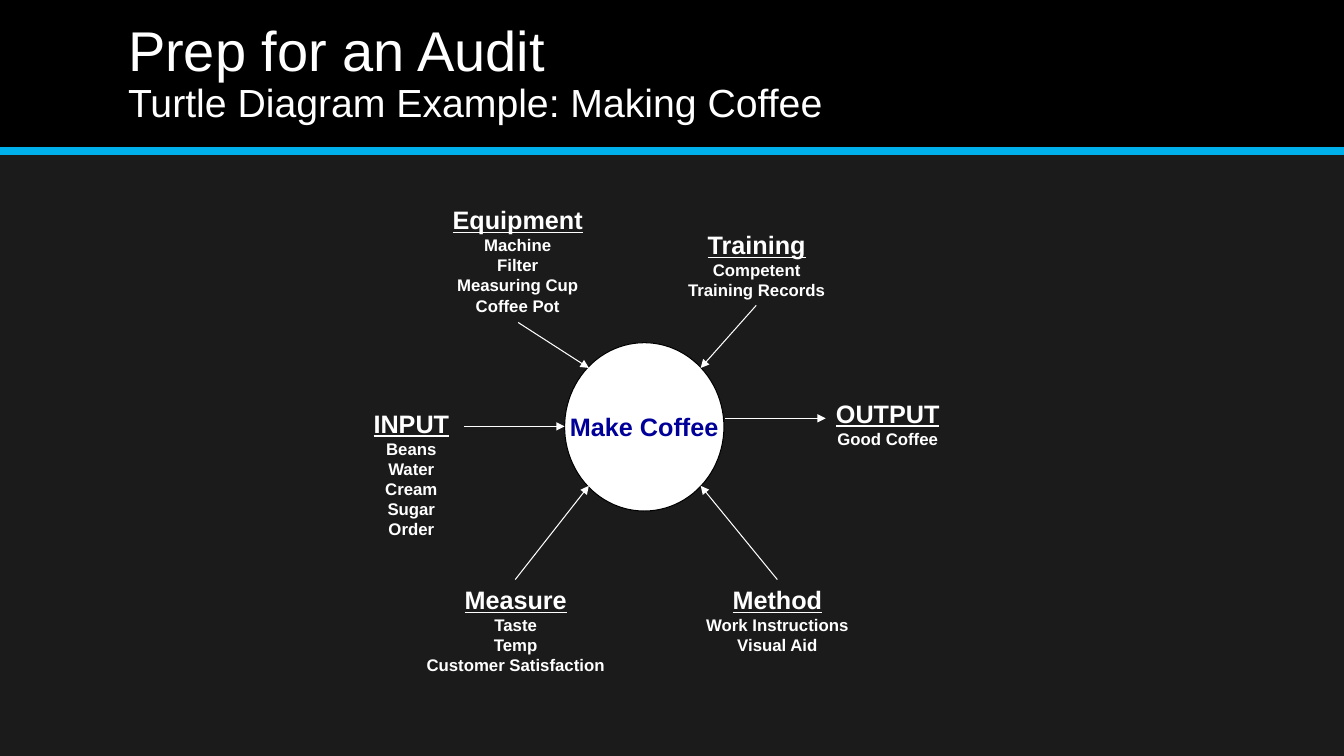
from dataclasses import dataclass

from lxml import etree
from pptx import Presentation
from pptx.dml.color import RGBColor
from pptx.enum.shapes import MSO_CONNECTOR, MSO_SHAPE
from pptx.enum.text import MSO_ANCHOR, MSO_AUTO_SIZE, PP_ALIGN
from pptx.oxml.ns import qn
from pptx.util import Inches, Pt

STRAIGHT = MSO_CONNECTOR.STRAIGHT
RECTANGLE, OVAL = MSO_SHAPE.RECTANGLE, MSO_SHAPE.OVAL
MIDDLE = MSO_ANCHOR.MIDDLE
LEFT, CENTER = PP_ALIGN.LEFT, PP_ALIGN.CENTER
FIT_SHAPE, NO_FIT = MSO_AUTO_SIZE.SHAPE_TO_FIT_TEXT, MSO_AUTO_SIZE.NONE
TITLE_ONLY_LAYOUT = 5


@dataclass(frozen=True)
class Theme:
    font: str = "Arial"
    background: RGBColor = RGBColor(0x1B, 0x1B, 0x1B)
    black: RGBColor = RGBColor(0, 0, 0)
    white: RGBColor = RGBColor(255, 255, 255)
    accent: RGBColor = RGBColor(0x00, 0xB0, 0xEA)
    navy: RGBColor = RGBColor(0, 0, 0x99)
    title: Pt = Pt(40)
    subtitle: Pt = Pt(28)
    heading: Pt = Pt(18)
    item: Pt = Pt(12)
    thin: Pt = Pt(0.75)
    thick: Pt = Pt(6)


THEME = Theme()
WIDTH, HEIGHT = 13.33, 7.5

# Heading, items, box (left, top, width, height)
NOTES = [
    ("INPUT", ["Beans", "Water", "Cream", "Sugar", "Order"], (3.6, 4, 0.96, 1.62)),
    ("OUTPUT", ["Good Coffee"], (8.19, 3.9, 1.23, 0.6)),
    ("Measure", ["Taste", "Temp", "Customer Satisfaction"], (4.13, 5.75, 1.97, 1)),
    ("Method", ["Work Instructions", "Visual Aid"], (6.9, 5.75, 1.62, 1)),
    ("Equipment", ["Machine", "Filter", "Measuring Cup", "Coffee Pot"],
     (4.38, 1.98, 1.51, 1.21)),
    ("Training", ["Competent", "Training Records"], (6.72, 2.23, 1.57, 0.8)),
]
PROCESS_BOX = (5.6, 3.4, 1.58, 1.67)

# Arrow ends, relative to the top left corner of the process circle
ARROWS = [
    ((-0.49, 2.35), (0.24, 1.42)),
    ((2.11, 2.35), (1.35, 1.42)),
    ((-1, 0.83), (0, 0.83)),
    ((1.59, 0.75), (2.59, 0.75)),
    ((1.9, -0.37), (1.35, 0.25)),
    ((-0.46, -0.2), (0.24, 0.25)),
]


def inches(values):
    return [Inches(value) for value in values]


def style(paragraph, size, color, underline=False):
    paragraph.alignment = CENTER
    font = paragraph.font
    font.name, font.size, font.bold = THEME.font, size, True
    font.underline = underline
    font.color.rgb = color


def add_line(slide, start, end, color, width, arrow=False):
    line = slide.shapes.add_connector(STRAIGHT, *inches(start + end))
    line.line.color.rgb = color
    line.line.width = width
    if arrow:
        etree.SubElement(line.line._get_or_add_ln(), qn("a:tailEnd"), type="triangle")
    etree.SubElement(line._element.spPr, qn("a:effectLst"))


def add_filled_shape(slide, kind, box, color):
    shape = slide.shapes.add_shape(kind, *inches(box))
    shape.shadow.inherit = False
    shape.fill.solid()
    shape.fill.fore_color.rgb = color
    return shape


def add_header(slide, box):
    left, top, width, height = box
    # Band and its accent rule
    band = add_filled_shape(slide, RECTANGLE, box, THEME.black)
    band.line.fill.background()
    add_line(slide, (left, top + height), (left + width, top + height),
             THEME.accent, THEME.thick)

    # Title, brought in front of the band
    title = slide.shapes.title
    slide.shapes._spTree.append(title._element)
    title.left, title.top, title.width, title.height = inches(
        (left + 1.17, top + 0.14, 11, 1.2))
    frame = title.text_frame
    frame.auto_size, frame.vertical_anchor = NO_FIT, MIDDLE
    paragraph = frame.paragraphs[0]
    paragraph.alignment, paragraph.line_spacing = LEFT, 0.9
    paragraph.font.name = THEME.font
    paragraph.font.color.rgb = THEME.white
    first = paragraph.add_run()
    first.text, first.font.size = "Prep for an Audit", THEME.title
    paragraph.add_line_break()
    second = paragraph.add_run()
    second.text = "Turtle Diagram Example: Making Coffee"
    second.font.size = THEME.subtitle


def add_note(slide, heading, items, box):
    frame = slide.shapes.add_textbox(*inches(box)).text_frame
    frame.word_wrap, frame.auto_size = False, FIT_SHAPE
    frame.text = "\n".join([heading, *items])
    style(frame.paragraphs[0], THEME.heading, THEME.white, underline=True)
    for paragraph in frame.paragraphs[1:]:
        style(paragraph, THEME.item, THEME.white)


def add_process(slide, box):
    # Central circle
    circle = add_filled_shape(slide, OVAL, box, THEME.white)
    circle.line.color.rgb = THEME.black
    circle.line.width = THEME.thin
    frame = circle.text_frame
    frame.word_wrap, frame.vertical_anchor = False, MIDDLE
    frame.text = "Make Coffee"
    style(frame.paragraphs[0], THEME.heading, THEME.navy)

    # Arrows around it
    left, top = box[:2]
    for ends in ARROWS:
        start, end = [(left + x, top + y) for x, y in ends]
        add_line(slide, start, end, THEME.white, THEME.thin, arrow=True)


def main():
    presentation = Presentation()
    presentation.slide_width, presentation.slide_height = inches((WIDTH, HEIGHT))
    slide = presentation.slides.add_slide(presentation.slide_layouts[TITLE_ONLY_LAYOUT])
    slide.background.fill.solid()
    slide.background.fill.fore_color.rgb = THEME.background

    add_header(slide, (0, 0, WIDTH, 1.5))
    for heading, items, box in NOTES:
        add_note(slide, heading, items, box)
    add_process(slide, PROCESS_BOX)
    presentation.save("out.pptx")


if __name__ == "__main__":
    main()
